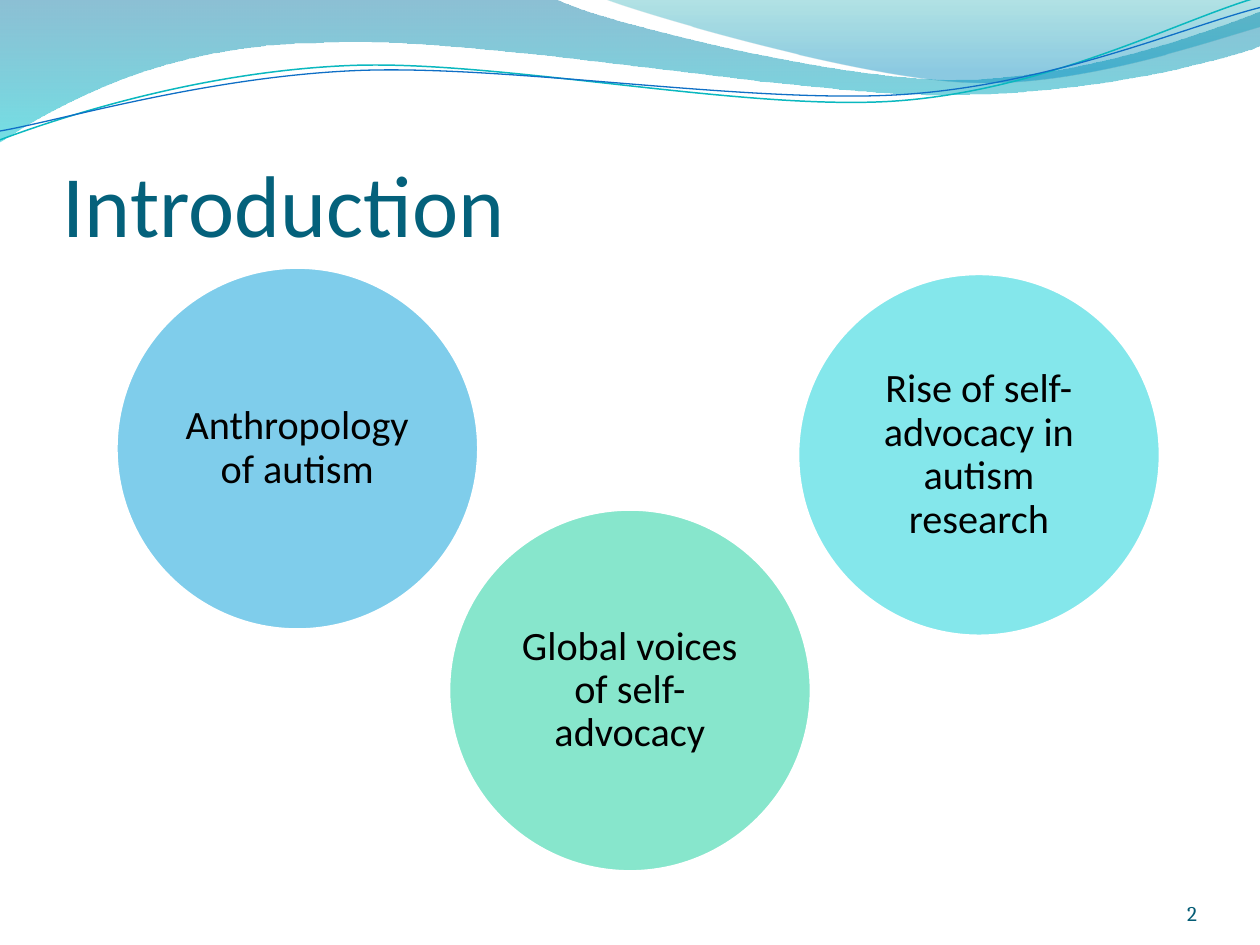
import math

import pptx
import pptx.dml.color
import pptx.enum.shapes
import pptx.enum.text
import pptx.oxml
import pptx.oxml.ns
import pptx.util
from pptx.util import Inches

ALIGN = pptx.enum.text.PP_ALIGN
ANCHOR = pptx.enum.text.MSO_ANCHOR

BACK_BAND = [
    [(0, -0.01)],
    [(4.4, -0.01)],
    [(4.76, 0.17), (6.64, 0.63), (7.58, 0.63)],
    [(8.53, 0.63), (9.58, 0.26), (10, 0.09)],
    [(10.01, 0.36)],
    [(9.83, 0.44), (8.7, 0.76), (7.46, 0.75)],
    [(6.22, 0.75), (3.82, 0.28), (2.57, 0.34)],
    [(1.29, 0.35), (0.46, 0.83), (-0.01, 1.13)],
]
FRONT_BAND = [
    [(4.79, -0.01)],
    [(5.09, 0.11), (6.82, 0.62), (7.69, 0.65)],
    [(8.56, 0.69), (9.61, 0.32), (10, 0.21)],
    [(10, 0)],
]
TEAL_WAVE = [
    [(0, 1.11)],
    [(0.48, 0.93), (1.58, 0.57), (2.77, 0.52)],
    [(3.95, 0.47), (5.93, 0.89), (7.13, 0.8)],
    [(8.33, 0.71), (9.38, 0.15), (9.98, -0.02)],
]
BLUE_WAVE = [
    [(0, 1.04)],
    [(0.47, 0.96), (1.64, 0.61), (2.83, 0.56)],
    [(4.03, 0.51), (5.97, 0.83), (7.17, 0.75)],
    [(8.36, 0.67), (9.41, 0.21), (10, 0.06)],
]
WAVE_CENTER = (4.99, 0.58)
WAVE_TILT = 2.7


def color(value):
    return pptx.dml.color.RGBColor.from_string(value)


def new_element(tag, attributes=""):
    return pptx.oxml.parse_xml(f'<a:{tag} {pptx.oxml.ns.nsdecls("a")} {attributes}/>')


def set_opacity(shape, percents):
    tones = shape.element.spPr.iter(pptx.oxml.ns.qn("a:srgbClr"))
    for tone, percent in zip(tones, percents):
        tone.append(new_element("alpha", f'val="{percent * 1000}"'))


def add_outline(page, left, top, segments, closed):
    places = [
        (left + Inches(x), top + Inches(y)) for points in segments for x, y in points
    ]
    builder = page.shapes.build_freeform(*places[0])
    builder.add_line_segments(places[1:], close=closed)
    shape = builder.convert_to_shape()
    shape.shadow.inherit = False
    lines = iter(list(shape.element.spPr.iter(pptx.oxml.ns.qn("a:lnTo"))))
    for points in segments[1:]:
        steps = [next(lines) for _ in points]
        if len(steps) == 3:
            curve = new_element("cubicBezTo")
            steps[0].addprevious(curve)
            for step in steps:
                curve.append(step[0])
                step.getparent().remove(step)
    return shape


def add_band(page, left, top, segments, stops):
    band = add_outline(page, left, top, segments, True)
    band.fill.gradient()
    band.fill.gradient_angle = 270
    for stop, (position, tone, _) in zip(band.fill.gradient_stops, stops):
        stop.position = position
        stop.color.rgb = color(tone)
    set_opacity(band, [percent for _, _, percent in stops])
    band.line.fill.background()


def level(point):
    angle = math.radians(WAVE_TILT)
    across, down = point[0] - WAVE_CENTER[0], point[1] - WAVE_CENTER[1]
    return (
        WAVE_CENTER[0] + across * math.cos(angle) - down * math.sin(angle),
        WAVE_CENTER[1] + across * math.sin(angle) + down * math.cos(angle),
    )


def add_wave(page, left, top, segments, tone, width):
    flat = [[level(point) for point in points] for points in segments]
    wave = add_outline(page, left, top, flat, False)
    wave.rotation = 360 - WAVE_TILT
    wave.fill.background()
    wave.line.color.rgb = color(tone)
    wave.line.width = pptx.util.Pt(width)


def add_header(page, left, top):
    add_band(page, left, top, BACK_BAND, [(0, "0074A1", 45), (1, "00C6CF", 55)])
    add_band(page, left, top, FRONT_BAND, [(0, "00A1A9", 30), (0.8, "008BBF", 45)])
    add_wave(page, left, top, TEAL_WAVE, "0AB8BF", 0.85)
    add_wave(page, left, top, BLUE_WAVE, "0F6FC6", 0.75)


def write(shape, text, size, font, tone, align, anchor, margins):
    frame = shape.text_frame
    frame.word_wrap = True
    frame.vertical_anchor = anchor
    frame.margin_left, frame.margin_top, frame.margin_right, frame.margin_bottom = map(
        Inches, margins
    )
    frame.text = text
    para = frame.paragraphs[0]
    para.alignment = align
    span = para.runs[0]
    span.font.size = pptx.util.Pt(size)
    span.font.name = font
    span.font.color.rgb = color(tone)
    return para


def add_title(page, left, top, width, height):
    box = page.shapes.add_textbox(left, top, width, height)
    write(box, "Introduction", 50, "Calibri", "04617B",
          ALIGN.LEFT, ANCHOR.BOTTOM, (0, 0.05, 0, 0))


def add_page_number(page, left, top, width, height):
    box = page.shapes.add_textbox(left, top, width, height)
    write(box, "2", 12, "Cambria", "045C75",
          ALIGN.RIGHT, ANCHOR.BOTTOM, (0, 0, 0, 0))


def add_topics(page, left, top, diameter):
    topics = [
        (0, 0, "009DD9", "Anthropology of autism"),
        (5.41, 0.05, "0BD0D9", "Rise of self-advocacy in autism research"),
        (2.64, 1.92, "10CF9B", "Global voices of self-advocacy"),
    ]
    for x, y, tone, text in topics:
        circle = page.shapes.add_shape(
            pptx.enum.shapes.MSO_SHAPE.OVAL,
            left + Inches(x), top + Inches(y), diameter, diameter,
        )
        circle.shadow.inherit = False
        circle.fill.solid()
        circle.fill.fore_color.rgb = color(tone)
        set_opacity(circle, [50])
        circle.line.color.rgb = color("FFFFFF")
        circle.line.width = pptx.util.Pt(2)
        para = write(circle, text, 23, "Calibri", "000000",
                     ALIGN.CENTER, ANCHOR.MIDDLE, (0.1, 0.1, 0.1, 0.1))
        para.line_spacing = 0.9


def main():
    deck = pptx.Presentation()
    deck.slide_width = Inches(10)
    deck.slide_height = Inches(7.5)
    page = deck.slides.add_slide(deck.slide_layouts[6])
    add_header(page, Inches(0), Inches(0))
    add_title(page, Inches(0.5), Inches(0.77), Inches(9), Inches(1.25))
    add_page_number(page, Inches(8.67), Inches(6.95), Inches(0.83), Inches(0.4))
    add_topics(page, Inches(0.92), Inches(2.12), Inches(2.88))
    deck.save("out.pptx")


if __name__ == "__main__":
    main()
